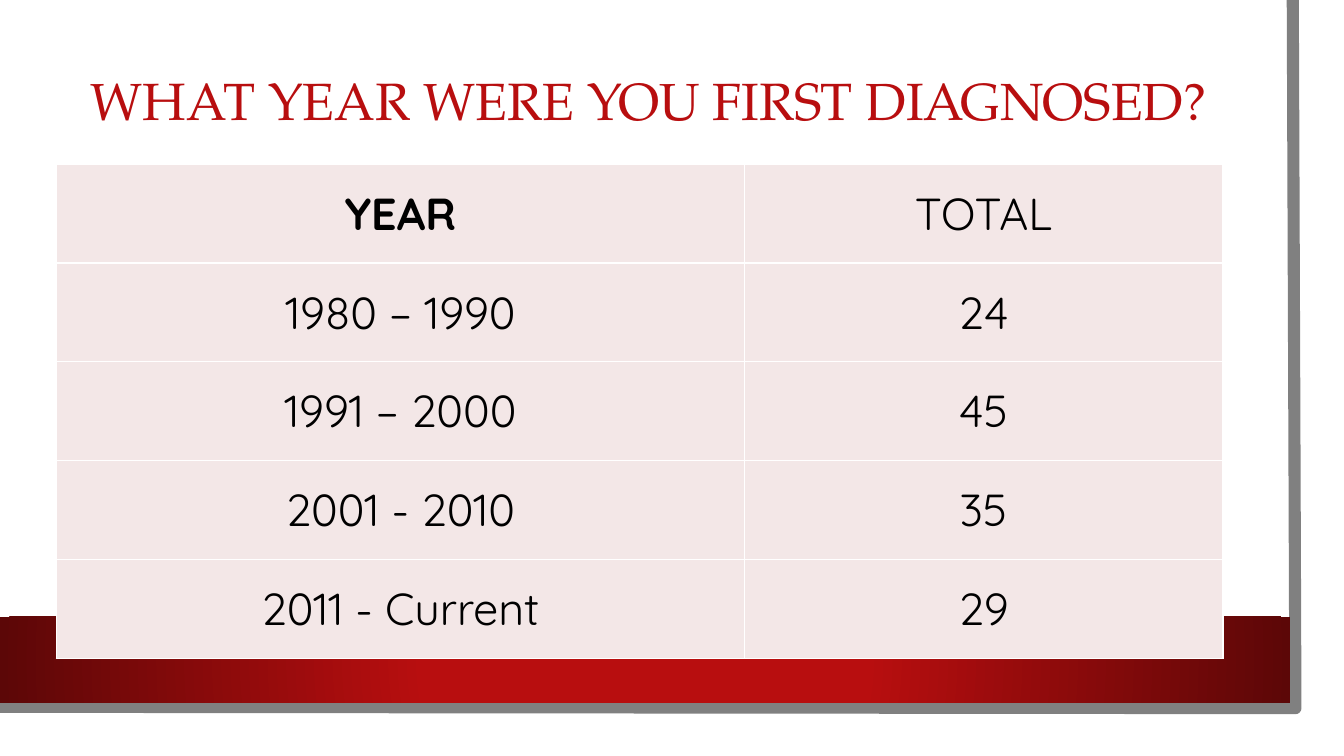
from dataclasses import dataclass

from lxml import etree
from pptx import Presentation
from pptx import util as u
from pptx.dml.color import RGBColor
from pptx.enum import shapes, text
from pptx.oxml import parse_xml
from pptx.oxml import ns

RED = "B80E0F"
DARK_RED = "5C0707"
GREY = "808080"
WHITE = "FFFFFF"
BLACK = "000000"
BLUSH = "F3E7E7"
COLUMN_WIDTHS = (368.6, 256.3)
ROW_HEIGHT = 53


@dataclass
class Period:
    years: str
    total: str
    header: bool = False


PERIODS = [
    Period("YEAR", "TOTAL", header=True),
    Period("1980 – 1990", "24"),
    Period("1991 – 2000", "45"),
    Period("2001 - 2010", "35"),
    Period("2011 - Current", "29"),
]


def color(value: str) -> RGBColor:
    return RGBColor.from_string(value)


def draw_edge(page) -> None:
    builder = page.shapes.build_freeform(u.Pt(692.6), 0)
    corners = [(694, 379.4), (-1.4, 378.7)]
    builder.add_line_segments([(u.Pt(x), u.Pt(y)) for x, y in corners], close=False)
    edge = builder.convert_to_shape()
    edge.shadow.inherit = False
    edge.fill.background()
    edge.line.color.rgb = color(GREY)
    edge.line.width = u.Pt(6.5)


def draw_band(page) -> None:
    band = page.shapes.add_shape(
        shapes.MSO_SHAPE.RECTANGLE, 0, u.Pt(330.5), u.Pt(691.2), u.Pt(46.1)
    )
    band.shadow.inherit = False
    band.line.fill.background()
    gradient = parse_xml(
        f'<a:gradFill {ns.nsdecls("a")} rotWithShape="1"><a:gsLst>'
        f'<a:gs pos="34000"><a:srgbClr val="{RED}"/></a:gs>'
        f'<a:gs pos="100000"><a:srgbClr val="{DARK_RED}"/></a:gs></a:gsLst>'
        '<a:path path="circle"><a:fillToRect l="50000" t="50000" r="50000" b="50000"/>'
        "</a:path></a:gradFill>"
    )
    band.element.spPr.find(ns.qn("a:prstGeom")).addnext(gradient)


def write_title(page) -> None:
    title = page.shapes.title
    title.left, title.top = u.Pt(40.3), u.Pt(21.6)
    title.width, title.height = u.Pt(614.2), u.Pt(67.7)
    frame = title.text_frame
    frame.text = "WHAT YEAR WERE YOU FIRST DIAGNOSED?"
    frame.margin_left = frame.margin_right = 0
    frame.auto_size = text.MSO_AUTO_SIZE.NONE
    frame.vertical_anchor = text.MSO_ANCHOR.MIDDLE
    para = frame.paragraphs[0]
    para.alignment = text.PP_ALIGN.CENTER
    para.line_spacing = 0.9
    para.font.name = "TeX Gyre Pagella"
    para.font.size = u.Pt(28)
    para.font.color.rgb = color(RED)


def add_borders(cell, line_color: str) -> None:
    properties = cell._tc.get_or_add_tcPr()
    for index, side in enumerate(("lnL", "lnR", "lnT", "lnB")):
        border = etree.Element(ns.qn(f"a:{side}"), w=str(u.Pt(1)))
        fill = etree.SubElement(border, ns.qn("a:solidFill"))
        etree.SubElement(fill, ns.qn("a:srgbClr"), val=line_color)
        properties.insert(index, border)


def write_cell(cell, words: str, bold: bool) -> None:
    cell.fill.solid()
    cell.fill.fore_color.rgb = color(BLUSH)
    add_borders(cell, WHITE)
    cell.margin_left = cell.margin_right = cell.margin_top = cell.margin_bottom = 0
    cell.vertical_anchor = text.MSO_ANCHOR.MIDDLE
    cell.text = words
    para = cell.text_frame.paragraphs[0]
    para.alignment = text.PP_ALIGN.CENTER
    para.font.name = "Quicksand"
    para.font.size = u.Pt(24)
    para.font.bold = bold
    para.font.color.rgb = color(BLACK)


def draw_table(page, periods: list[Period]) -> None:
    table = page.shapes.add_table(
        len(periods), len(COLUMN_WIDTHS), u.Pt(30.2), u.Pt(87.8),
        u.Pt(sum(COLUMN_WIDTHS)), u.Pt(ROW_HEIGHT * len(periods)),
    ).table
    table.first_row = False
    table.horz_banding = False
    for column, width in zip(table.columns, COLUMN_WIDTHS):
        column.width = u.Pt(width)
    for index, period in enumerate(periods):
        table.rows[index].height = u.Pt(ROW_HEIGHT)
        write_cell(table.cell(index, 0), period.years, period.header)
        write_cell(table.cell(index, 1), period.total, False)


def main() -> None:
    deck = Presentation()
    deck.slide_width, deck.slide_height = u.Pt(720), u.Pt(405)
    page = deck.slides.add_slide(deck.slide_layouts[5])
    draw_edge(page)
    draw_band(page)
    write_title(page)
    draw_table(page, PERIODS)
    deck.save("out.pptx")


if __name__ == "__main__":
    main()
